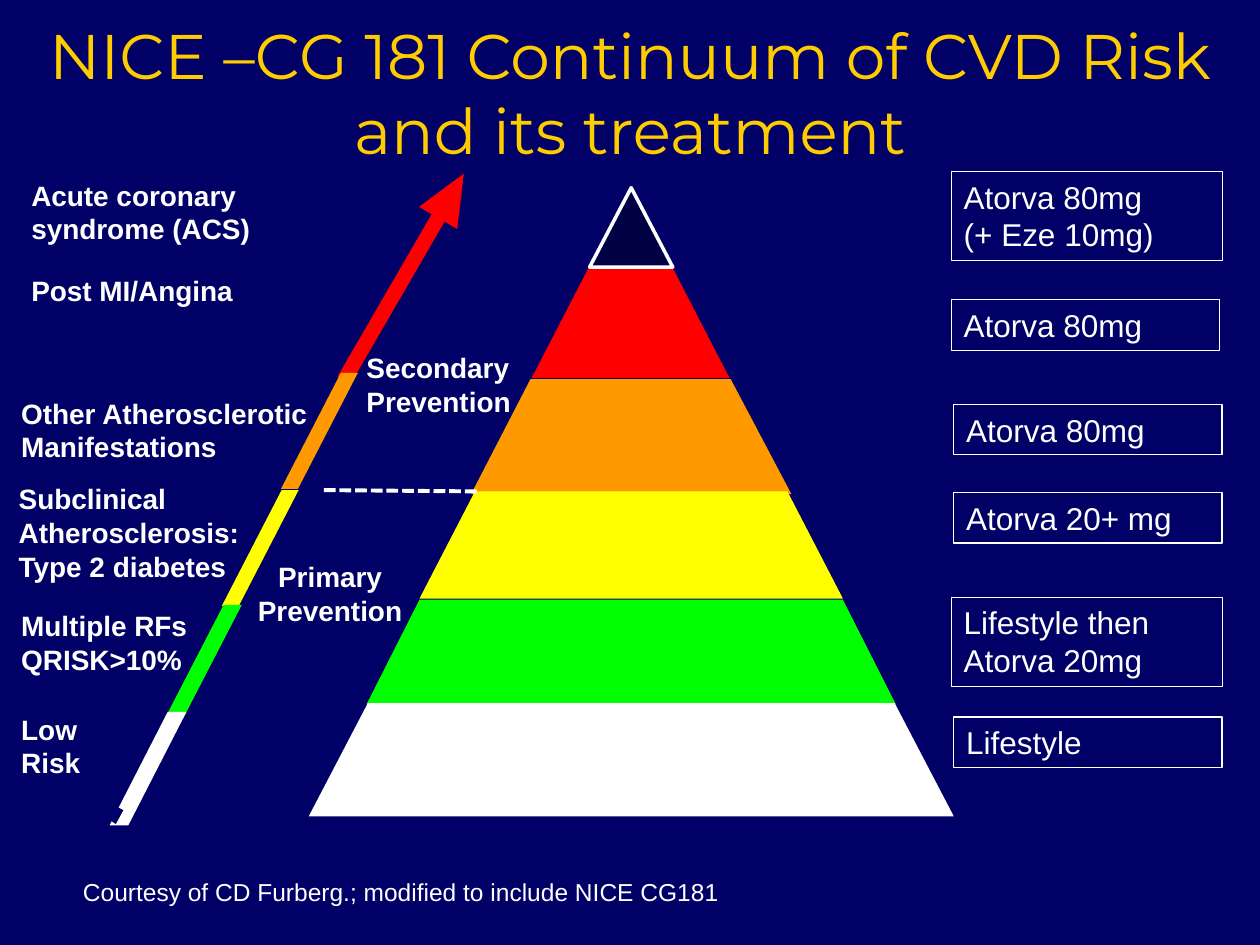
from pptx import Presentation
from pptx.util import Inches, Pt
from pptx.dml.color import RGBColor
from pptx.enum.dml import MSO_LINE as Dash
from pptx.enum.shapes import MSO_SHAPE as Kind, MSO_CONNECTOR as Link
from pptx.enum.text import PP_ALIGN as Align, MSO_ANCHOR as Anchor, MSO_AUTO_SIZE as Fit
from lxml import etree


def paint(item, tint):
    if hasattr(item, "solid"):
        item.solid()
        item = item.fore_color
    item.rgb = RGBColor.from_string(tint)


def write(shape, text, size, bold=False, align=Align.LEFT, anchor=Anchor.MIDDLE,
          tint="FFFFFF", face="Arial"):
    frame = shape.text_frame
    frame.text = text
    frame.word_wrap = True
    frame.auto_size = Fit.SHAPE_TO_FIT_TEXT
    frame.vertical_anchor = anchor
    for para in frame.paragraphs:
        para.alignment = align
        for run in para.runs:
            run.font.size = Pt(size)
            run.font.bold = bold
            run.font.name = face
            paint(run.font.color, tint)


deck = Presentation()
deck.slide_width, deck.slide_height = Inches(10), Inches(7.5)
slide = deck.slides.add_slide(deck.slide_layouts[5])
paint(slide.background.fill, "000066")
shapes = slide.shapes

title = shapes.title
title.left, title.top = Inches(0), Inches(0.08)
title.width, title.height = Inches(10), Inches(1.3)
write(title, "NICE –CG 181 Continuum of CVD Risk and its treatment", 36,
      align=Align.CENTER, tint="FFCC00", face="Montserrat")

labels = [
    (0.15, 1.36, 2.6, 0.64, "Acute coronary syndrome (ACS)", Align.LEFT),
    (0.15, 2.12, 1.93, 0.37, "Post MI/Angina", Align.LEFT),
    (0.07, 3.09, 3.84, 0.64, "Other Atherosclerotic Manifestations", Align.LEFT),
    (0.05, 3.77, 3.12, 0.91, "Subclinical\nAtherosclerosis:\nType 2 diabetes", Align.LEFT),
    (0.07, 4.78, 2.68, 0.64, "Multiple RFs\nQRISK>10%", Align.LEFT),
    (0.07, 5.6, 2.01, 0.64, "Low\nRisk", Align.LEFT),
    (2.81, 2.73, 2.08, 0.64, "Secondary\nPrevention", Align.LEFT),
    (1.62, 4.39, 2, 0.64, "Primary\vPrevention", Align.CENTER),
]
for x, y, w, h, text, align in labels:
    label = shapes.add_textbox(Inches(x), Inches(y), Inches(w), Inches(h))
    write(label, text, 16, bold=True, align=align)

credit = shapes.add_textbox(Inches(0.56), Inches(6.9), Inches(6.45), Inches(0.34))
write(credit, "Courtesy of CD Furberg.; modified to include NICE CG181", 14,
      anchor=Anchor.BOTTOM)

parts = [
    (Kind.ISOSCELES_TRIANGLE, 4.22, 1.48, 1.57, 1.52, [0.5], 0, "FF0000"),
    (Kind.UP_ARROW, 3.03, 1.25, 0.35, 1.9, [0.337, 1.162], 30.1, "FF0000"),
    (Kind.PARALLELOGRAM, 2.23, 2.96, 0.61, 0.92, [0.779], 0, "FF9900"),
    (Kind.PARALLELOGRAM, 1.76, 3.89, 0.61, 0.92, [0.779], 0, "FFFF00"),
    (Kind.PARALLELOGRAM, 1.31, 4.8, 0.61, 0.9, [0.763], 0, "00FF00"),
    (Kind.PARALLELOGRAM, 0.87, 5.65, 0.61, 0.9, [0.756], 0, "FFFFFF"),
    (Kind.ISOSCELES_TRIANGLE, 4.68, 1.49, 0.66, 0.63, [0.5], 0, "000044"),
]
for kind, x, y, w, h, bends, turn, tint in parts:
    part = shapes.add_shape(kind, Inches(x), Inches(y), Inches(w), Inches(h))
    for i, bend in enumerate(bends):
        part.adjustments[i] = bend
    part.rotation = turn
    part.shadow.inherit = False
    paint(part.fill, tint)
    part.line.fill.background()
tip = part
paint(tip.line.fill, "FFFFFF")
tip.line.width = Pt(2)

bands = [
    ([(4.21, 3.01), (5.8, 3.01), (6.28, 3.92), (3.74, 3.92)], "FF9900"),
    ([(3.77, 3.9), (6.25, 3.9), (6.69, 4.75), (3.33, 4.75)], "FFFF00"),
    ([(3.33, 4.76), (6.69, 4.76), (7.11, 5.59), (2.91, 5.59)], "00FF00"),
    ([(2.92, 5.58), (7.1, 5.58), (7.57, 6.48), (2.45, 6.48)], "FFFFFF"),
    ([(0.86, 6.37), (0.81, 6.47), (0.92, 6.54), (0.98, 6.43)], "000066"),
]
for points, tint in bands:
    spots = [(Inches(x), Inches(y)) for x, y in points]
    pen = shapes.build_freeform(*spots[0])
    pen.add_line_segments(spots[1:], close=True)
    band = pen.convert_to_shape()
    band.shadow.inherit = False
    paint(band.fill, tint)
    band.line.fill.background()

drugs = [
    (7.55, 1.36, 2.15, 0.71, "Atorva 80mg\n(+ Eze 10mg)"),
    (7.55, 2.38, 2.13, 0.4, "Atorva 80mg"),
    (7.57, 3.21, 2.13, 0.4, "Atorva 80mg"),
    (7.57, 3.91, 2.13, 0.4, "Atorva 20+ mg"),
    (7.55, 4.74, 2.15, 0.71, "Lifestyle then Atorva 20mg"),
    (7.57, 5.69, 2.13, 0.4, "Lifestyle"),
]
for x, y, w, h, text in drugs:
    box = shapes.add_shape(Kind.RECTANGLE, Inches(x), Inches(y), Inches(w), Inches(h))
    box.shadow.inherit = False
    box.fill.background()
    paint(box.line.fill, "FFFFFF")
    box.line.width = Pt(0.75)
    write(box, text, 18, anchor=Anchor.TOP)

split = shapes.add_connector(Link.STRAIGHT, Inches(2.57), Inches(3.89),
                             Inches(3.79), Inches(3.9))
paint(split.line.fill, "FFFFFF")
split.line.width = Pt(2.25)
split.line.dash_style = Dash.SQUARE_DOT
space = "http://schemas.openxmlformats.org/drawingml/2006/main"
etree.SubElement(split._element.spPr, f"{{{space}}}effectLst")

deck.save("out.pptx")
